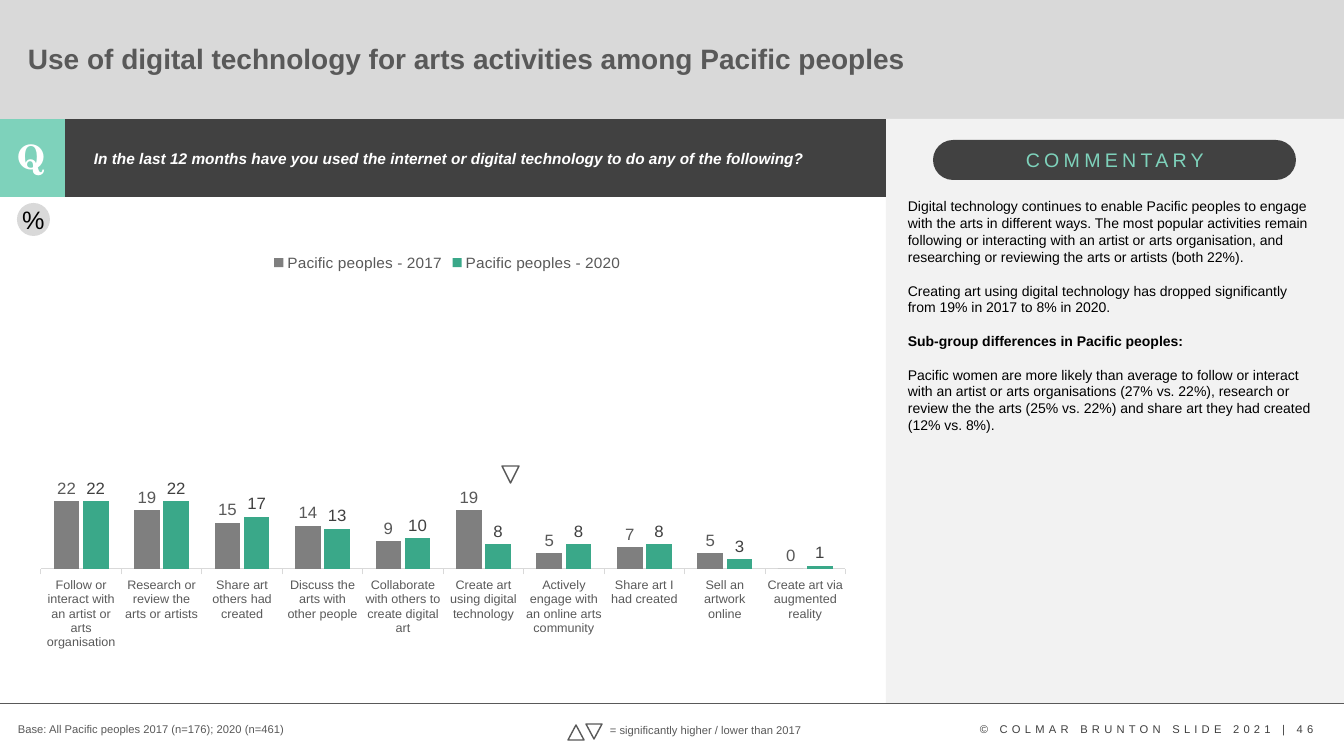
from lxml import etree
from pptx import Presentation
from pptx.chart.data import CategoryChartData
from pptx.dml.color import RGBColor
from pptx.enum.chart import XL_CHART_TYPE, XL_LABEL_POSITION, XL_LEGEND_POSITION, XL_TICK_MARK
from pptx.enum.shapes import MSO_CONNECTOR, MSO_SHAPE
from pptx.enum.text import MSO_ANCHOR, PP_ALIGN
from pptx.oxml import parse_xml
from pptx.oxml.ns import nsdecls, qn
from pptx.util import Pt

RECT, PILL = MSO_SHAPE.RECTANGLE, MSO_SHAPE.ROUNDED_RECTANGLE
OVAL, TRIANGLE = MSO_SHAPE.OVAL, MSO_SHAPE.ISOSCELES_TRIANGLE
LEFT, CENTER = PP_ALIGN.LEFT, PP_ALIGN.CENTER
TOP, MIDDLE = MSO_ANCHOR.TOP, MSO_ANCHOR.MIDDLE
COLUMNS = XL_CHART_TYPE.COLUMN_CLUSTERED
OUTSIDE_END = XL_LABEL_POSITION.OUTSIDE_END
LEGEND_TOP = XL_LEGEND_POSITION.TOP
TICK_OUT = XL_TICK_MARK.OUTSIDE
STRAIGHT = MSO_CONNECTOR.STRAIGHT

EMU_PER_PX = 914400 / 100.8
GREY, DARK, MINT, PALE = "595959", "414141", "7ED2BB", "D9D9D9"
INK, WHITE, BLACK = "404040", "FFFFFF", "000000"

ACTIVITIES = [
    ("Follow or interact with an artist or arts organisation", 22, 22),
    ("Research or review the arts or artists", 19, 22),
    ("Share art others had created", 15, 17),
    ("Discuss the arts with other people", 14, 13),
    ("Collaborate with others to create digital art", 9, 10),
    ("Create art using digital technology", 19, 8),
    ("Actively engage with an online arts community", 5, 8),
    ("Share art I had created", 7, 8),
    ("Sell an artwork online", 5, 3),
    ("Create art via augmented reality", 0, 1),
]
SERIES = [
    ("Pacific peoples - 2017", "7F7F7F", GREY),
    ("Pacific peoples - 2020", "3AA889", INK),
]
COMMENTARY = [
    ("Digital technology continues to enable Pacific peoples to engage with the arts in "
     "different ways. The most popular activities remain following or interacting with an "
     "artist or arts organisation, and researching or reviewing the arts or artists (both 22%).", False),
    ("Creating art using digital technology has dropped significantly from 19% in 2017 "
     "to 8% in 2020.", False),
    ("Sub-group differences in Pacific peoples:", True),
    ("Pacific women are more likely than average to follow or interact with an artist or "
     "arts organisations (27% vs. 22%), research or review the the arts (25% vs. 22%) and "
     "share art they had created (12% vs. 8%).", False),
]


def px(*values):
    """Turn pixel lengths into a list of EMU."""
    return [round(v * EMU_PER_PX) for v in values]


def color(hex_color):
    """Return the colour for a hex string."""
    return RGBColor.from_string(hex_color)


def set_font(font, size, hex_color, bold=False, italic=False, name="Arial"):
    """Set the face, size, colour and style of a font."""
    font.name, font.size = name, Pt(size)
    font.bold, font.italic = bold, italic
    font.color.rgb = color(hex_color)


def add_panel(s, kind, box, fill, line=None, flipped=False):
    """Add a filled preset shape, outlined if a line colour is given."""
    sp = s.shapes.add_shape(kind, *px(*box))
    sp.shadow.inherit = False
    sp.fill.solid()
    sp.fill.fore_color.rgb = color(fill)
    if line:
        sp.line.color.rgb = color(line)
        sp.line.width = Pt(1)
    else:
        sp.line.fill.background()
    if flipped:
        sp.rotation = 180
    return sp


def add_rule(s, x1, x2, y):
    """Add a thin horizontal line."""
    rule = s.shapes.add_connector(STRAIGHT, *px(x1, y, x2, y))
    rule.line.color.rgb = color(GREY)
    rule.line.width = Pt(0.5)
    etree.SubElement(rule._element.spPr, qn("a:effectLst"))


def add_text(s, box, text, size, hex_color, align=LEFT, anchor=TOP, spacing=None, tracking=0, **style):
    """Add a wrapped one-paragraph text box."""
    tf = s.shapes.add_textbox(*px(*box)).text_frame
    tf.word_wrap, tf.vertical_anchor = True, anchor
    p = tf.paragraphs[0]
    p.alignment, p.line_spacing = align, spacing
    r = p.add_run()
    r.text = text
    set_font(p.font, size, hex_color, **style)
    if tracking:
        r._r.get_or_add_rPr().set("spc", str(tracking * 100))


def add_commentary(s, box):
    """Add the commentary paragraphs."""
    tf = s.shapes.add_textbox(*px(*box)).text_frame
    tf.word_wrap = True
    for i, (text, bold) in enumerate(COMMENTARY):
        p = tf.add_paragraph() if i else tf.paragraphs[0]
        p.text = text
        if i:
            p.space_before = Pt(12)
        set_font(p.font, 10, BLACK, bold)


def add_percent_badge(s, box):
    """Add the round percent sign."""
    sp = add_panel(s, OVAL, box, PALE)
    tf = sp.text_frame
    tf.margin_left = tf.margin_right = tf.margin_top = tf.margin_bottom = 0
    tf.word_wrap, tf.vertical_anchor = False, MIDDLE
    p = tf.paragraphs[0]
    p.text, p.alignment = "%", CENTER
    set_font(p.font, 18, BLACK)


def place_plot(chart, x, y, w, h):
    """Fix the inner plot area as fractions of the chart."""
    area = chart._chartSpace.chart.plotArea
    for old in area.findall(qn("c:layout")):
        area.remove(old)
    values = "".join(f'<c:{tag} val="{v}"/>' for tag, v in zip("xywh", (x, y, w, h)))
    area.insert(0, parse_xml(
        f'<c:layout {nsdecls("c")}><c:manualLayout><c:layoutTarget val="inner"/>'
        f'<c:xMode val="edge"/><c:yMode val="edge"/>{values}</c:manualLayout></c:layout>'))


def add_activity_chart(s, box):
    """Add the clustered columns comparing both years."""
    names, *years = zip(*ACTIVITIES)
    data = CategoryChartData()
    data.categories = names
    for (name, _, _), values in zip(SERIES, years):
        data.add_series(name, values)
    chart = s.shapes.add_chart(COLUMNS, *px(*box), data).chart
    set_font(chart.font, 10, BLACK)
    chart.has_title = False
    chart.has_legend = True
    chart.legend.position = LEGEND_TOP
    chart.legend.include_in_layout = False
    set_font(chart.legend.font, 11, GREY)

    value_axis, cat_axis = chart.value_axis, chart.category_axis
    value_axis.minimum_scale, value_axis.maximum_scale = 0, 100
    value_axis.has_major_gridlines = False
    value_axis.visible = False
    cat_axis.major_tick_mark = TICK_OUT
    cat_axis.format.line.color.rgb = color(PALE)
    cat_axis.format.line.width = Pt(0.75)
    set_font(cat_axis.tick_labels.font, 9, GREY)

    plot = chart.plots[0]
    plot.gap_width, plot.overlap, plot.vary_by_categories = 100, -14, False
    for series, (_, fill, label_color) in zip(plot.series, SERIES):
        series.format.fill.solid()
        series.format.fill.fore_color.rgb = color(fill)
        labels = series.data_labels
        labels.show_value, labels.position = True, OUTSIDE_END
        set_font(labels.font, 12, label_color)
    place_plot(chart, 0.02, 0.05, 0.95, 0.77)


def main():
    """Build the slide and save it."""
    prs = Presentation()
    prs.slide_width, prs.slide_height = px(1344, 756)
    s = prs.slides.add_slide(prs.slide_layouts[6])

    add_panel(s, RECT, (0, 0, 1344, 119), PALE)
    add_panel(s, RECT, (886, 119, 458, 584), "F2F2F2")
    add_panel(s, RECT, (65, 119, 821, 78), DARK)
    add_panel(s, RECT, (0, 119, 65, 78), MINT)
    add_panel(s, PILL, (933, 140, 363, 40), DARK).adjustments[0] = 0.5
    add_rule(s, 0, 1344, 703)

    add_text(s, (18, 21, 1128, 79), "Use of digital technology for arts activities among Pacific peoples",
             20, GREY, anchor=MIDDLE, spacing=0.9, bold=True)
    add_text(s, (8, 131, 47, 50), "Q", 24, WHITE, CENTER, bold=True, name="TeX Gyre Schola")
    add_text(s, (84, 146, 766, 46),
             "In the last 12 months have you used the internet or digital technology to do any of the following?",
             11, WHITE, spacing=0.9, bold=True, italic=True)
    add_text(s, (1016, 143, 220, 34), "COMMENTARY", 14, MINT, tracking=3)
    add_commentary(s, (898, 193, 429, 248))

    add_percent_badge(s, (17, 203, 33, 33))
    add_activity_chart(s, (24, 243, 847, 407))
    add_panel(s, TRIANGLE, (502, 466, 17, 17), WHITE, GREY, flipped=True)

    add_text(s, (8, 717, 377, 24), "Base: All Pacific peoples 2017 (n=176); 2020 (n=461)", 8, GREY)
    add_panel(s, TRIANGLE, (568, 725, 16, 15), WHITE, GREY)
    add_panel(s, TRIANGLE, (586, 724, 16, 15), WHITE, GREY, flipped=True)
    add_text(s, (600, 718, 230, 24), "= significantly higher / lower than 2017", 8, GREY)
    add_text(s, (970, 717, 374, 24), "© COLMAR BRUNTON SLIDE 2021 | 46", 8, INK, tracking=3)
    prs.save("out.pptx")


if __name__ == "__main__":
    main()
